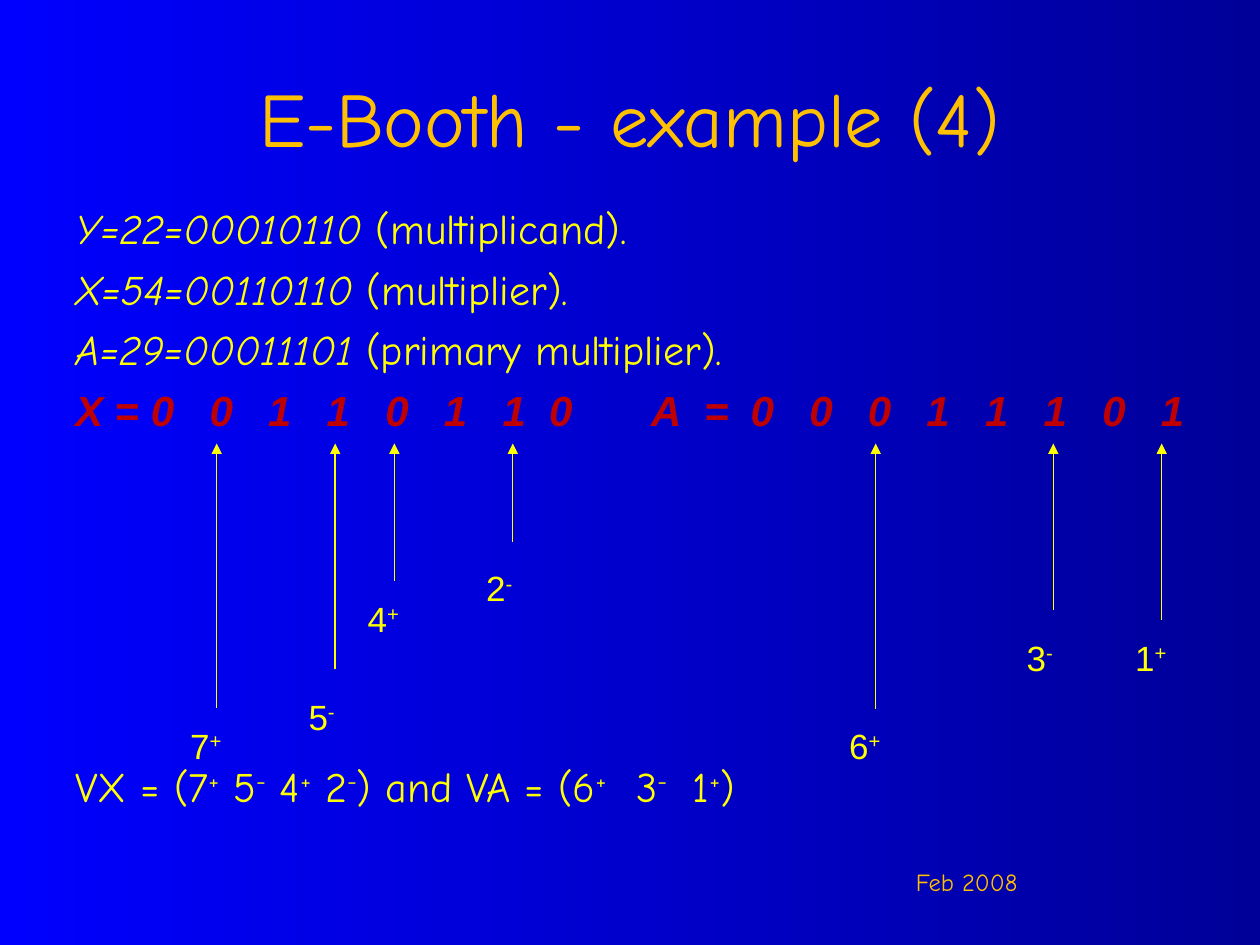
from pptx import Presentation
from pptx.dml.color import RGBColor as RGB
from pptx.enum.shapes import MSO_CONNECTOR as Conn
from pptx.enum.text import MSO_ANCHOR as Anchor, PP_ALIGN as Align
from pptx.oxml.xmlchemy import OxmlElement as Node
from pptx.util import Inches, Pt

HUE = {"left": "0000FF", "right": "000099", "gold": "FFC000",
       "text": "FFFF00", "bits": "C00000"}
COMIC, ARIAL = "Comic Neue", "Arial"
WIDE, HIGH = 10, 7.5
STEP = 0.47
TOP = 3.52

TITLE = "E-Booth - example (4)"
DATE = "Feb 2008"
GIVEN = [("Y=22=00010110", " (multiplicand)."),
         ("X=54=00110110", " (multiplier)."),
         ("A=29=00011101", " (primary multiplier).")]
WORDS = [("X", "00110110"), ("A", "00011101")]
VECTOR = ["VX = (7", "+", " 5", "-", " 4", "+", " 2", "-", ") and VA = (6", "+",
          "\t3", "-", "\t1", "+", ")"]
MARKS = [(1.72, 0, "7", "+", 5.62, 5.7), (1.72, 2, "5", "-", 5.31, 5.47),
         (1.72, 3, "4", "+", 4.61, 4.69), (1.72, 5, "2", "-", 4.3, 4.45),
         (6.95, 0, "6", "+", 5.63, 5.7), (6.95, 3, "3", "-", 4.84, 5),
         (6.95, 4.83, "1", "+", 4.92, 5)]
BITS = [0.31] + [0.6 + 0.465 * i for i in range(7)] + [3.76, 4.57, 4.99]
BITS += [5.36 + 0.465 * i for i in range(8)]


def write(para, text, size=24, font=COMIC, hue="text", bold=False, slant=False, high=False):
    run = para.add_run()
    run.text = text
    face = run.font
    face.size, face.name, face.bold, face.italic = Pt(size), font, bold, slant
    face.color.rgb = RGB.from_string(HUE[hue])
    if high:
        face._element.set("baseline", "30000")


def add_box(slide, left, top, width, height):
    frame = slide.shapes.add_textbox(*map(Inches, (left, top, width, height))).text_frame
    frame.word_wrap = True
    return frame


def set_tabs(para, stops):
    tabs = Node("a:tabLst")
    for stop in stops:
        tab = Node("a:tab")
        tab.set("pos", str(Inches(stop)))
        tab.set("algn", "l")
        tabs.append(tab)
    para._p.get_or_add_pPr().append(tabs)


def add_arrow(slide, x, end):
    line = slide.shapes.add_connector(Conn.STRAIGHT, *map(Inches, (x, TOP, x, end)))
    line.line.color.rgb = RGB.from_string(HUE["text"])
    line.line.width = Pt(0.75)
    head = Node("a:headEnd")
    head.set("type", "triangle")
    line.line._get_or_add_ln().append(head)
    line._element.spPr.append(Node("a:effectLst"))


def add_body(slide):
    frame = add_box(slide, 0.05 * WIDE, 1.56, 0.9 * WIDE, 5.14)
    frame.margin_right = 0
    paras = [frame.paragraphs[0]] + [frame.add_paragraph() for _ in range(4)]
    for para in paras[1:4]:
        para.space_before = Pt(5.8)
    for para, (value, role) in zip(paras, GIVEN):
        write(para, value, slant=True)
        write(para, role)
    row, last = paras[3:]
    set_tabs(row, BITS)
    cells = [cell for name, bits in WORDS for cell in (name, "=", *bits)]
    write(row, "\t".join(cells), font=ARIAL, hue="bits", bold=True, slant=True)
    last.space_before = Pt(186)
    set_tabs(last, [4.45, 4.9])
    for i, part in enumerate(VECTOR):
        write(last, part, high=i % 2 == 1)


def main():
    deck = Presentation()
    deck.slide_width, deck.slide_height = Inches(WIDE), Inches(HIGH)
    slide = deck.slides.add_slide(deck.slide_layouts[5])
    fill = slide.background.fill
    fill.gradient()
    fill.gradient_angle = 0
    for stop, side in zip(fill.gradient_stops, ("left", "right")):
        stop.color.rgb = RGB.from_string(HUE[side])

    title = slide.shapes.title
    title.left, title.top, title.width, title.height = map(
        Inches, (0.05 * WIDE, 0.04 * HIGH, 0.9 * WIDE, 1.25))
    title.text_frame.vertical_anchor = Anchor.MIDDLE
    head = title.text_frame.paragraphs[0]
    head.alignment = Align.CENTER
    write(head, TITLE, size=44, hue="gold")

    add_body(slide)
    date = add_box(slide, 7.17, 6.83, 2.33, 0.52)
    write(date.paragraphs[0], DATE, size=14, hue="gold")

    for base, col, digit, sign, end, top in MARKS:
        x = base + col * STEP
        add_arrow(slide, x, end)
        label = add_box(slide, x - 0.31, top, 0.62, 0.44).paragraphs[0]
        write(label, digit, size=20, font=ARIAL)
        write(label, sign, size=20, font=ARIAL, high=True)
    deck.save("out.pptx")


if __name__ == "__main__":
    main()
